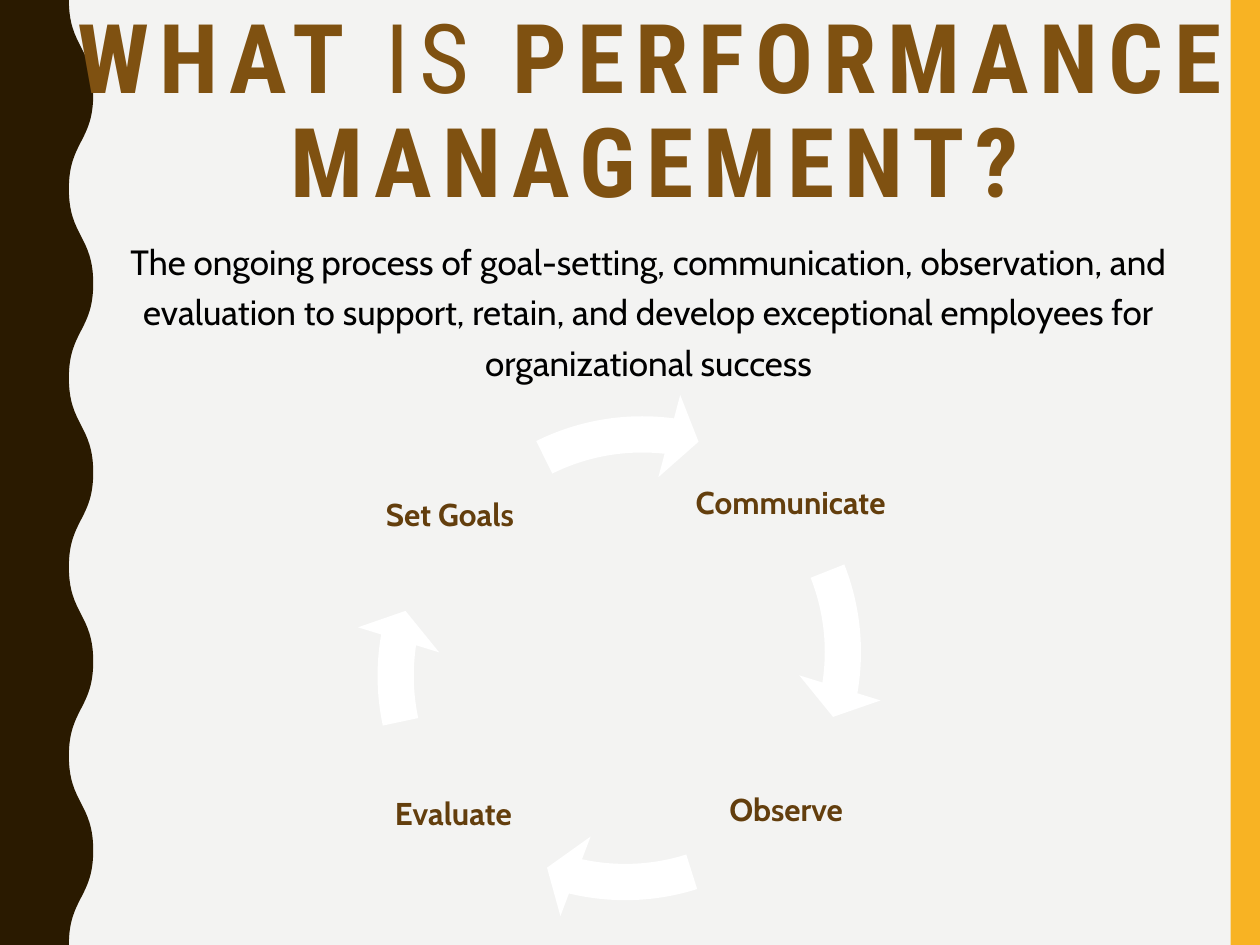
from pptx import Presentation
from pptx.dml.color import RGBColor
from pptx.enum.shapes import MSO_SHAPE as Shape
from pptx.enum.text import MSO_ANCHOR as Anchor, PP_ALIGN as Align
from pptx.oxml.ns import qn
from pptx.util import Cm, Pt
from lxml.etree import SubElement

SLIDE_W, SLIDE_H = 25.4, 19.05
PAPER, GOLD, DARK, WHITE = "F3F3F2", "F8B323", "2A1A00", "FFFFFF"
TITLE_BROWN, LABEL_BROWN, BLACK = "7F5111", "633E0D", "000000"
TITLE_FONT, BODY_FONT = "Roboto Condensed", "Cabin"

# Label, its box, then the arrow leading on: offset, end and start angle
STEPS = [
    ("Communicate", (6.59, 1.04, 4.7, 2.64), (0.26, 0.05), (5.63, 203.06)),
    ("Observe", (6.97, 6.67, 3.76, 3.76), (0.31, 0.25), (61.83, 43.45)),
    ("Evaluate", (0.26, 6.75, 3.76, 3.76), (0.12, 0.53), (113.64, 100.76)),
    ("Set Goals", (0.19, 0.73, 3.76, 3.76), (0.65, 0.1), (166.26, 146.17)),
]
ARROW_SIZE = 10.59
BAND, HEAD_ANGLE, HEAD_WIDTH = 0.069, 4.658, 0.081


def rgb(hex_color):
    return RGBColor.from_string(hex_color)


def paint(shape, color):
    shape.shadow.inherit = False
    shape.fill.solid()
    shape.fill.fore_color.rgb = rgb(color)
    shape.line.fill.background()


def add_text(shapes, box, runs, font, size, color, line_spacing,
             anchor=Anchor.TOP, inset=None, tracking=None):
    """Centred paragraph; runs are (text, bold) pairs."""
    frame = shapes.add_textbox(*map(Cm, box)).text_frame
    frame.word_wrap = True
    frame.vertical_anchor = anchor
    if inset is not None:
        frame.margin_left = frame.margin_right = Cm(inset)
        frame.margin_top = frame.margin_bottom = Cm(inset)
    paragraph = frame.paragraphs[0]
    paragraph.alignment = Align.CENTER
    paragraph.line_spacing = line_spacing
    for text, bold in runs:
        run = paragraph.add_run()
        run.text = text
        run.font.name, run.font.size, run.font.bold = font, Pt(size), bold
        run.font.color.rgb = rgb(color)
        if tracking:
            run._r.get_or_add_rPr().set("spc", str(tracking * 100))


def add_wavy_edge(slide, left, top, width, height, trough=1.39, halves=10):
    """Dark strip whose right side swings smoothly between trough and width."""
    half = height / halves
    wave = [(Cm(left + (width if i % 2 else trough)), Cm(top + i * half))
            for i in range(halves + 1)]
    corners = [(Cm(left), Cm(top + height)), (Cm(left), Cm(top))]
    builder = slide.shapes.build_freeform(*wave[0])
    builder.add_line_segments(wave[1:] + corners, close=True)
    strip = builder.convert_to_shape()
    paint(strip, DARK)

    # Turn each straight half wave into a curve with vertical ends
    sides = list(strip._element.iter(qn("a:lnTo")))[:halves]
    for side, (x0, y0), (x1, y1) in zip(sides, wave, wave[1:]):
        side.tag = qn("a:cubicBezTo")
        side.remove(side[0])
        middle = (y0 + y1) // 2
        for x, y in ((x0, middle), (x1, middle), (x1, y1)):
            SubElement(side, qn("a:pt"), x=str(x - Cm(left)), y=str(y - Cm(top)))


def add_frame(slide):
    """Background, gold bar on the right, wavy strip on the left."""
    slide.background.fill.solid()
    slide.background.fill.fore_color.rgb = rgb(PAPER)
    bar_w = 0.59
    bar = slide.shapes.add_shape(
        Shape.RECTANGLE, Cm(SLIDE_W - bar_w), 0, Cm(bar_w), Cm(SLIDE_H))
    paint(bar, GOLD)
    add_wavy_edge(slide, 0, 0, 1.88, SLIDE_H)


def add_heading(slide, box):
    runs = [("WHAT ", True), ("IS ", False), ("PERFORMANCE MANAGEMENT?", True)]
    add_text(slide.shapes, box, runs, TITLE_FONT, 55, TITLE_BROWN, 0.9, tracking=6)


def add_definition(slide, box):
    text = ("The ongoing process of goal-setting, communication, observation, "
            "and evaluation to support, retain, and develop exceptional "
            "employees for organizational success")
    add_text(slide.shapes, box, [(text, False)], BODY_FONT, 20, BLACK, 1.2)


def add_cycle(slide, left, top):
    """Group of four labels joined clockwise by curved arrows."""
    shapes = slide.shapes.add_group_shape().shapes
    for label, (x, y, w, h), (dx, dy), (end, start) in STEPS:
        add_text(shapes, (left + x, top + y, w, h), [(label, True)], BODY_FONT, 18,
                 LABEL_BROWN, 0.9, anchor=Anchor.MIDDLE, inset=0.08)
        arrow = shapes.add_shape(
            Shape.CIRCULAR_ARROW, Cm(left + dx), Cm(top + dy),
            Cm(ARROW_SIZE), Cm(ARROW_SIZE))
        for i, value in enumerate((BAND, HEAD_ANGLE, end, start, HEAD_WIDTH)):
            arrow.adjustments[i] = value
        paint(arrow, WHITE)


def main():
    deck = Presentation()
    deck.slide_width, deck.slide_height = Cm(SLIDE_W), Cm(SLIDE_H)
    slide = deck.slides.add_slide(deck.slide_layouts[6])
    add_frame(slide)
    add_heading(slide, (0.99, 0.08, 24.43, 6.78))
    add_cycle(slide, 7, 7.8)
    add_definition(slide, (1.43, 4.55, 23.29, 3.33))
    deck.save("out.pptx")


if __name__ == "__main__":
    main()
